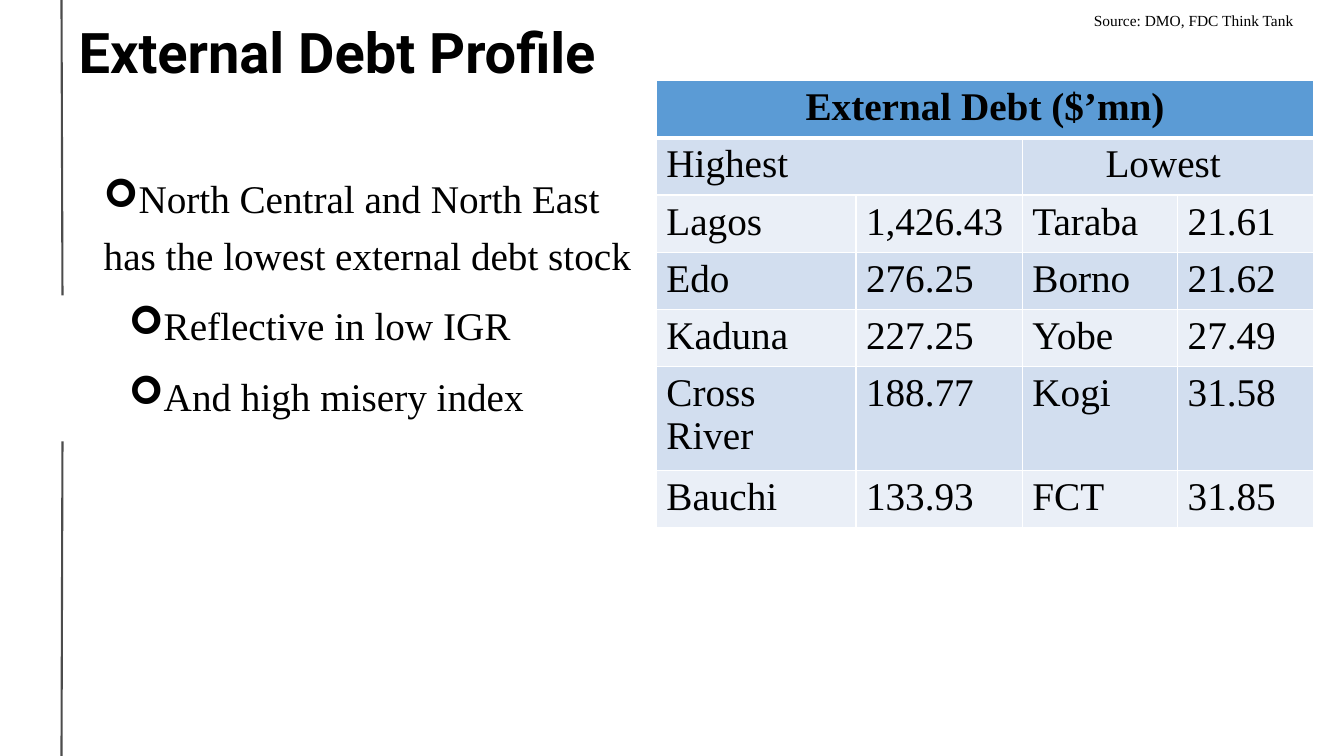
from lxml.etree import SubElement
from pptx import Presentation
from pptx.dml.color import RGBColor
from pptx.enum.shapes import MSO_CONNECTOR
from pptx.enum.text import MSO_ANCHOR, PP_ALIGN
from pptx.oxml.ns import qn
from pptx.util import Inches, Pt

BLACK = RGBColor(0x00, 0x00, 0x00)
WHITE = RGBColor(0xFF, 0xFF, 0xFF)
HEADER_BLUE = RGBColor(0x5B, 0x9B, 0xD5)
BAND_DARK = RGBColor(0xD2, 0xDE, 0xEF)
BAND_LIGHT = RGBColor(0xEA, 0xEF, 0xF7)

TITLE = {"name": "Roboto", "size": Pt(40), "bold": True}
BODY = {"name": "Times New Roman", "size": Pt(28), "bold": False}
HEADING = {**BODY, "bold": True}
SOURCE = {**BODY, "size": Pt(11)}

BULLETS = [
    (0, "North Central and North East has the lowest external debt stock"),
    (1, "Reflective in low IGR"),
    (1, "And high misery index"),
]
COLUMN_WIDTHS = [1.98, 1.65, 1.54, 1.35]
DEBT_ROWS = [
    ["External Debt ($’mn)", "", "", ""],
    ["Highest", "", "Lowest ", ""],
    ["Lagos", "1,426.43", "Taraba", "21.61"],
    ["Edo", "276.25", "Borno", "21.62"],
    ["Kaduna", "227.25", "Yobe", "27.49"],
    ["Cross River", "188.77", "Kogi", "31.58"],
    ["Bauchi", "133.93", "FCT", "31.85"],
]
MERGES = [(0, 0, 3), (1, 0, 1), (1, 2, 3)]
CENTERED = [(0, 0), (1, 2)]


class DebtSlide:
    def __init__(self, prs):
        self.s = prs.slides.add_slide(prs.slide_layouts[6])

    def add_text(self, p, text, style):
        r = p.add_run()
        r.text = text
        for name, value in style.items():
            setattr(r.font, name, value)
        r.font.color.rgb = BLACK

    def frame(self, *box):
        tf = self.s.shapes.add_textbox(*map(Inches, box)).text_frame
        tf.word_wrap = True
        return tf

    def title(self, text, *box):
        tf = self.frame(*box)
        tf.vertical_anchor = MSO_ANCHOR.MIDDLE
        for side in ("left", "top", "right", "bottom"):
            setattr(tf, f"margin_{side}", 0)
        p = tf.paragraphs[0]
        p.line_spacing = 0.9
        self.add_text(p, text, TITLE)

    def label(self, text, *box):
        self.add_text(self.frame(*box).paragraphs[0], text, SOURCE)

    def bullets(self, items, *box):
        tf = self.frame(*box)
        for i, (level, text) in enumerate(items):
            p = tf.add_paragraph() if i else tf.paragraphs[0]
            p.level = level
            p.line_spacing = 1.2
            if i:
                p.space_before = Pt(10)
            pPr = p._p.get_or_add_pPr()
            pPr.set("marL", str(Inches(0.5 * level)))
            pPr.set("indent", str(Inches(-0.25)))
            SubElement(pPr, qn("a:buFont"), typeface="Wingdings")
            SubElement(pPr, qn("a:buChar"), char="➢")
            self.add_text(p, text, BODY)

    def rule(self, *ends):
        sp = self.s.shapes.add_connector(MSO_CONNECTOR.STRAIGHT, *map(Inches, ends))
        sp.line.width = Pt(1.5)
        sp.line.color.rgb = BLACK
        color = sp.line._ln.find(f".//{qn('a:srgbClr')}")
        SubElement(color, qn("a:alpha"), val="70000")
        SubElement(sp._element.spPr, qn("a:effectLst"))

    def borders(self, cell, row):
        tcPr = cell._tc.get_or_add_tcPr()
        thick = {0: "B", 1: "T"}.get(row)
        for side in "LRTB":
            width = Pt(3 if side == thick else 1)
            ln = SubElement(tcPr, qn(f"a:ln{side}"), w=str(width))
            fill = SubElement(ln, qn("a:solidFill"))
            SubElement(fill, qn("a:srgbClr"), val=str(WHITE))

    def table(self, rows, left, top, width, height):
        gf = self.s.shapes.add_table(
            len(rows), len(COLUMN_WIDTHS), *map(Inches, (left, top, width, height)))
        table = gf.table
        for column, column_width in zip(table.columns, COLUMN_WIDTHS):
            column.width = Inches(column_width)
        for row, first, last in MERGES:
            table.cell(row, first).merge(table.cell(row, last))
        for i, texts in enumerate(rows):
            table.rows[i].height = Inches(0.41)
            band = BAND_DARK if i % 2 else BAND_LIGHT
            for j, text in enumerate(texts):
                cell = table.cell(i, j)
                self.borders(cell, i)
                cell.fill.solid()
                cell.fill.fore_color.rgb = band if i else HEADER_BLUE
                if text:
                    p = cell.text_frame.paragraphs[0]
                    if (i, j) in CENTERED:
                        p.alignment = PP_ALIGN.CENTER
                    self.add_text(p, text, BODY if i else HEADING)
        gf.height = Inches(height)


def main():
    prs = Presentation()
    prs.slide_width, prs.slide_height = Inches(13.33), Inches(7.5)
    slide = DebtSlide(prs)
    slide.rule(0.62, 4.38, 0.61, 7.5)
    slide.rule(0.61, 0, 0.62, 2.93)
    slide.title("External Debt Profile", 0.78, 0.29, 10.57, 0.52)
    slide.bullets(BULLETS, 0.93, 1.59, 5.58, 4.36)
    slide.label("Source: DMO, FDC Think Tank", 10.75, 0.06, 3.59, 0.29)
    slide.table(DEBT_ROWS, 6.51, 0.8, 6.52, 3.97)
    prs.save("out.pptx")


if __name__ == "__main__":
    main()
